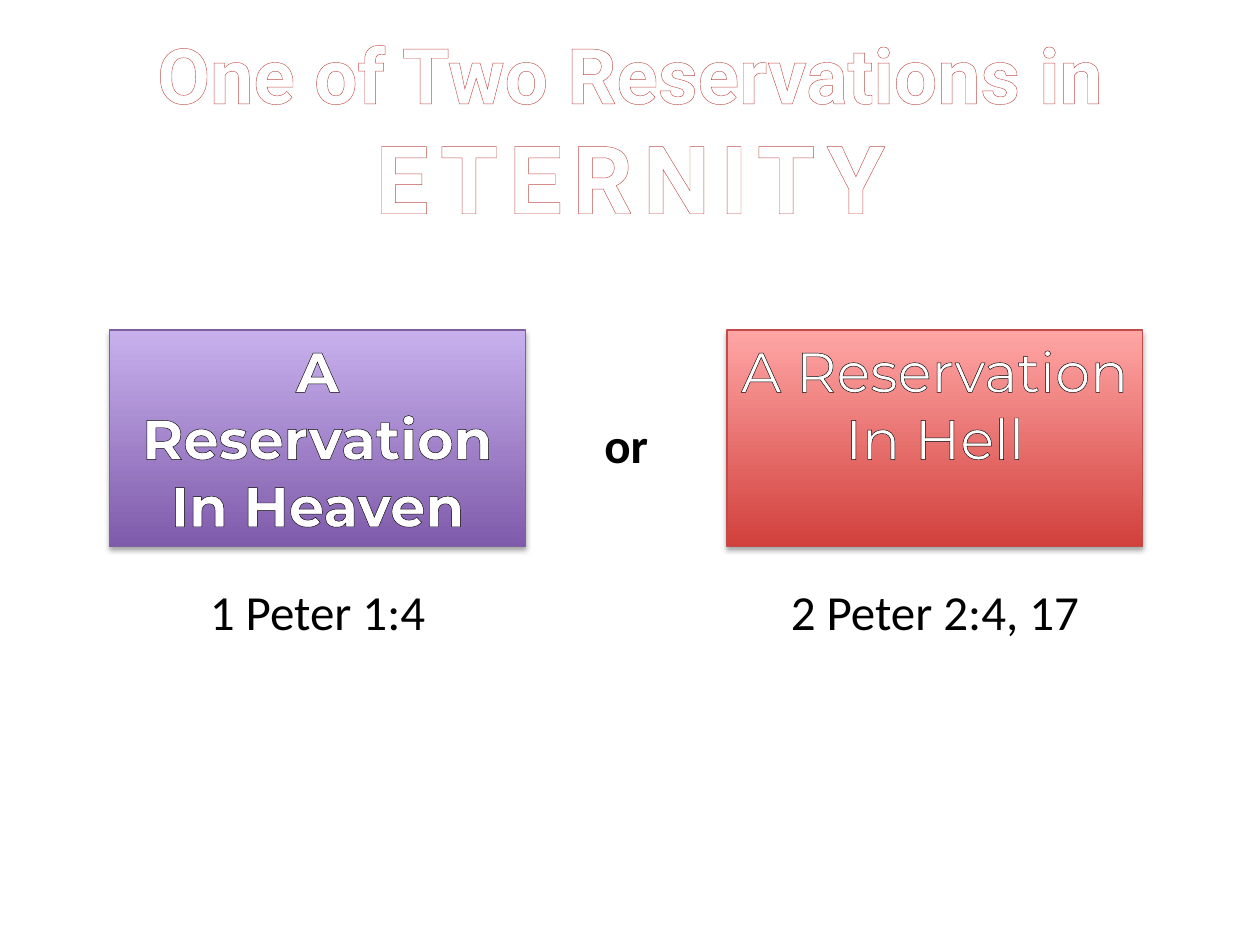
from lxml import etree
from pptx import Presentation
from pptx.dml.color import RGBColor
from pptx.enum import shapes, text
from pptx.oxml import ns
from pptx.util import Inches, Pt

WHITE, BLACK = "FFFFFF", "000000"


def color(value):
    return RGBColor.from_string(value)


def add_solid(parent, value, alpha=None):
    """Add an sRGB colour element, with an opacity in percent if given."""
    node = etree.SubElement(parent, ns.qn("a:srgbClr"), val=value)
    if alpha is not None:
        etree.SubElement(node, ns.qn("a:alpha"), val=str(alpha * 1000))


def add_text(para, words, font="Calibri", size=28, fill=BLACK, bold=False,
             outline=None, spacing=0):
    """Add a centred span; outline is (colour, points), spacing is in points."""
    para.alignment = text.PP_ALIGN.CENTER
    span = para.add_run()
    span.text = words
    span.font.name = font
    span.font.size = Pt(size)
    span.font.bold = bold
    span.font.color.rgb = color(fill)
    properties = span.font._element
    if spacing:
        properties.set("spc", str(spacing * 100))
    if outline:
        line_color, width = outline
        line = etree.Element(ns.qn("a:ln"), w=str(Pt(width)))
        add_solid(etree.SubElement(line, ns.qn("a:solidFill")), line_color)
        properties.insert(0, line)


def place_title(page, left, top, width, height):
    title = page.shapes.title
    title.left, title.top, title.width, title.height = (
        Inches(length) for length in (left, top, width, height))
    frame = title.text_frame
    frame.auto_size = text.MSO_AUTO_SIZE.NONE
    frame.vertical_anchor = text.MSO_ANCHOR.MIDDLE
    style = dict(font="Roboto", fill=WHITE, bold=True, outline=("C0504D", 0.52))
    para = frame.paragraphs[0]
    add_text(para, "One of Two Reservations in ", size=44, **style)
    add_text(para, "ETERNITY", size=54, spacing=6, **style)


def add_label(page, center, top, words, bold=False):
    """Add a one-line text box centred on a horizontal position."""
    width = 2.6
    box = page.shapes.add_textbox(Inches(center - width / 2), Inches(top),
                                  Inches(width), Inches(0.57))
    box.text_frame.word_wrap = True
    add_text(box.text_frame.paragraphs[0], words, bold=bold)


def add_shadow(shape):
    shape.shadow.inherit = False
    effects = shape._element.spPr.find(ns.qn("a:effectLst"))
    shadow = etree.SubElement(effects, ns.qn("a:outerShdw"), blurRad=str(Pt(3.1)),
                              dist=str(Pt(1.8)), dir="5400000", rotWithShape="0")
    add_solid(shadow, BLACK, alpha=35)


def add_reservation(page, left, top, words, verse, gradient, border, bold):
    """Add a gradient card with its verse reference below."""
    width, height = 3.3, 1.72
    card = page.shapes.add_shape(shapes.MSO_SHAPE.RECTANGLE, Inches(left),
                                 Inches(top), Inches(width), Inches(height))
    card.fill.gradient()
    card.fill.gradient_angle = 90
    for stop, value in zip(card.fill.gradient_stops, gradient):
        stop.color.rgb = color(value)
    card.line.color.rgb = color(border)
    card.line.width = Pt(0.75)
    add_shadow(card)
    frame = card.text_frame
    frame.word_wrap = True
    frame.vertical_anchor = text.MSO_ANCHOR.TOP
    add_text(frame.paragraphs[0], words, font="Montserrat", size=32, fill=WHITE,
             bold=bold, outline=(BLACK, 0.75))
    add_label(page, left + width / 2, top + height + 0.23, verse)


def main():
    deck = Presentation()
    deck.slide_width, deck.slide_height = Inches(10), Inches(7.5)
    page = deck.slides.add_slide(deck.slide_layouts.get_by_name("Title Only"))
    place_title(page, 0.13, 0.16, 9.75, 1.74)
    add_reservation(page, 0.87, 2.62, "A Reservation In Heaven", "1 Peter 1:4",
                    ("7F5BAB", "C8B0ED"), "7D60A0", bold=True)
    add_reservation(page, 5.77, 2.62, "A Reservation In Hell", "2 Peter 2:4, 17",
                    ("D1403C", "FFA6A5"), "BF4C48", bold=False)
    add_label(page, 4.97, 3.24, "or", bold=True)
    deck.save("out.pptx")


if __name__ == "__main__":
    main()
